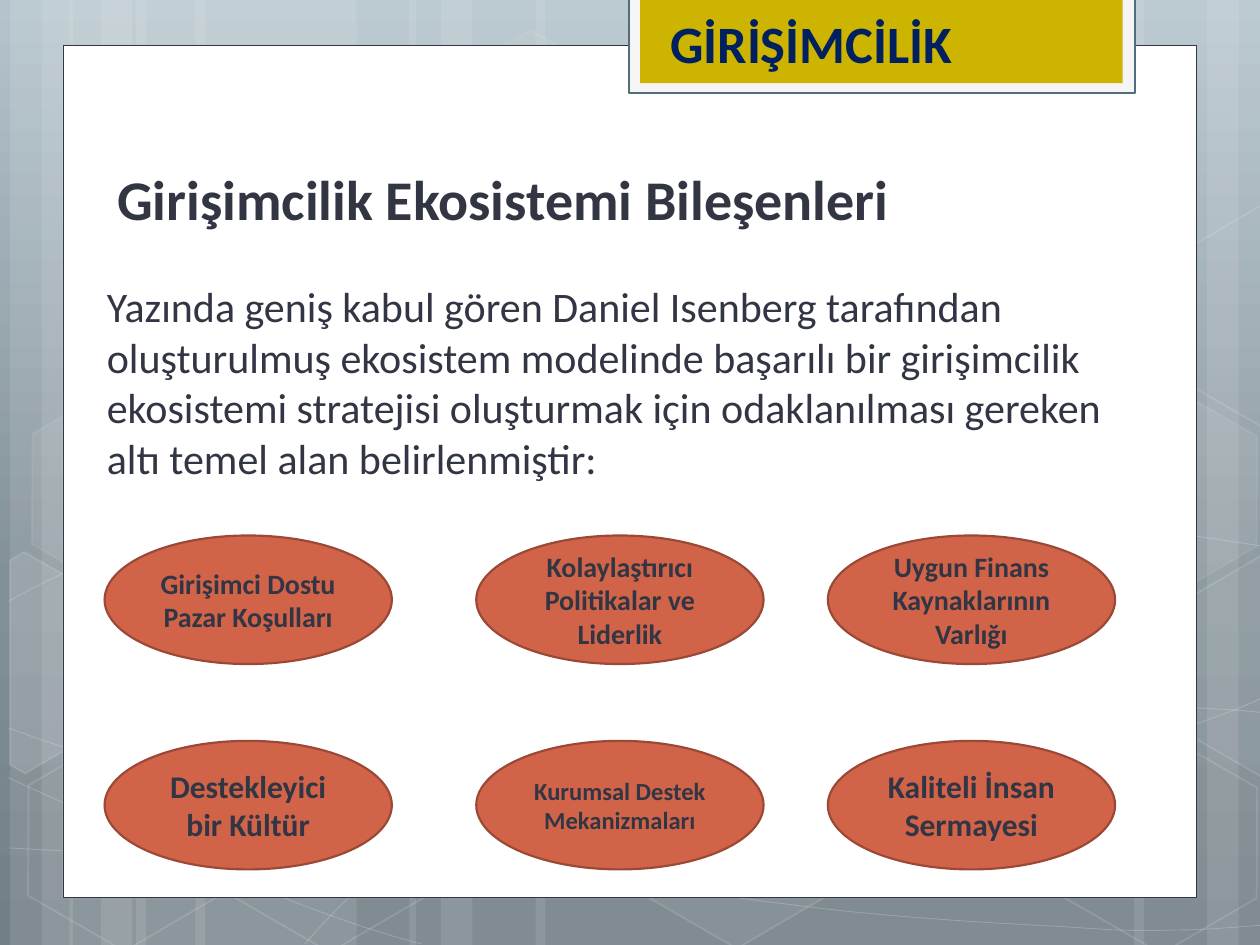
"""Build the slide on the components of the entrepreneurship ecosystem."""
import copy

import pptx
import pptx.dml.color
import pptx.enum.shapes
import pptx.enum.text
import pptx.oxml.ns
import pptx.util

RGB = pptx.dml.color.RGBColor
SHAPE = pptx.enum.shapes.MSO_SHAPE
ALIGN = pptx.enum.text.PP_ALIGN
ANCHOR = pptx.enum.text.MSO_ANCHOR
AUTO_SIZE = pptx.enum.text.MSO_AUTO_SIZE
qn = pptx.oxml.ns.qn

EMU_PER_PX = 9144
FONT = "Calibri"
WHITE = RGB(0xFF, 0xFF, 0xFF)
INK = RGB(0x32, 0x35, 0x43)
TITLE_INK = RGB(0x32, 0x36, 0x43)
NAVY = RGB(0x00, 0x20, 0x60)
TAB_EDGE = RGB(0x54, 0x6D, 0x7A)
TAB_BORDER = RGB(0xF5, 0xF5, 0xF5)
GOLD = RGB(0xCC, 0xB4, 0x00)
RUST = RGB(0xD1, 0x63, 0x49)
RUST_EDGE = RGB(0x9B, 0x49, 0x36)
SKY = [(0, RGB(0xB5, 0xC4, 0xCC)), (0.62, RGB(0x82, 0x90, 0x97)),
       (1, RGB(0x72, 0x7F, 0x86))]

STRIPES = [(108, 175, 0), (8, 50, 0), (33, 83, 0), (155, 175, 0), (55, 50, 0),
           (80, 83, 0), (733, 175, 180), (958, 50, 180), (900, 83, 180),
           (425, 308, 0), (325, 50, 0), (350, 83, 0)]
CURVES = [
    [(7, 673), (61, 676), (115, 679), (190, 678), (265, 677), (358, 675), (458, 665),
     (558, 655), (700, 636), (792, 617), (883, 598), (977, 568), (1007, 551)],
    [(7, 477), (36, 461), (65, 446), (121, 431), (178, 416), (259, 394), (347, 387),
     (436, 380), (544, 379), (654, 387), (764, 395), (947, 426), (1007, 434)],
    [(6, 617), (127, 672), (247, 727), (334, 749)],
    [(7, 578), (38, 589), (70, 600), (128, 616), (186, 631), (273, 656), (357, 673),
     (440, 690), (545, 708), (628, 718), (711, 729), (800, 733), (853, 736),
     (905, 740), (919, 738), (945, 738), (971, 737), (989, 735), (1007, 734)],
    [(242, 749), (260, 729), (278, 709), (302, 691), (326, 673), (360, 653), (388, 639),
     (416, 625), (433, 619), (470, 609), (506, 599), (573, 585), (608, 578),
     (644, 571), (649, 571), (680, 569), (711, 566), (760, 563), (794, 562),
     (829, 561), (886, 562), (886, 562), (908, 562), (931, 562), (953, 562),
     (971, 563), (988, 564), (997, 565), (1006, 566), (1003, 565), (1006, 566)],
]
HEXAGONS = [(334, 36, 4, 8), (497, 589, 6, 12), (11, 591, 0, 12), (14, 312, 7, 8),
            (174, 592, 0, 12), (753, 453, 10, 12), (834, 593, 0, 12), (834, 314, 7, 8)]
CUT_HEXAGONS = [
    ([(8, 445), (19, 438), (96, 482), (95, 570), (20, 614), (8, 607)], 10),
    ([(926, 485), (1001, 441), (1009, 446), (1009, 613), (1002, 617), (926, 573)], 4),
    ([(926, 207), (1001, 163), (1010, 168), (1009, 335), (1002, 339), (926, 295)], 0),
]
COLUMNS = [83, 378, 657]
ROWS = [425, 588]
COMPONENTS = [
    ("Girişimci Dostu Pazar Koşulları", 16),
    ("Kolaylaştırıcı Politikalar ve Liderlik", 16),
    ("Uygun Finans Kaynaklarının Varlığı", 16),
    ("Destekleyici bir Kültür", 18),
    ("Kurumsal Destek Mekanizmaları", 14),
    ("Kaliteli İnsan Sermayesi", 18),
]
INTRODUCTION = (
    "Yazında geniş kabul gören Daniel Isenberg tarafından oluşturulmuş ekosistem "
    "modelinde başarılı bir girişimcilik ekosistemi stratejisi oluşturmak için "
    "odaklanılması gereken altı temel alan belirlenmiştir:")


def px(*lengths):
    return [length * EMU_PER_PX for length in lengths]


def set_alpha(shape, color_location, percent):
    color = shape.element.spPr.find("/".join(qn(tag) for tag in color_location.split("/")))
    color.append(color.makeelement(qn("a:alpha"), {"val": str(percent * 1000)}))


def paint(shape, fill=None, line=None, width=1, fill_alpha=100, line_alpha=100):
    shape.shadow.inherit = False
    if fill is None:
        shape.fill.background()
    else:
        shape.fill.solid()
        shape.fill.fore_color.rgb = fill
        if fill_alpha < 100:
            set_alpha(shape, "a:solidFill/a:srgbClr", fill_alpha)
    if line is None:
        shape.line.fill.background()
    else:
        shape.line.color.rgb = line
        shape.line.width = pptx.util.Pt(width)
        if line_alpha < 100:
            set_alpha(shape, "a:ln/a:solidFill/a:srgbClr", line_alpha)


def add_preset(slide, kind, box, **colors):
    shape = slide.shapes.add_shape(kind, *px(*box))
    paint(shape, **colors)
    return shape


def add_outline(slide, points, close, **colors):
    builder = slide.shapes.build_freeform(*points[0], scale=EMU_PER_PX)
    builder.add_line_segments(points[1:], close=close)
    shape = builder.convert_to_shape()
    paint(shape, **colors)
    return shape


def add_curve(slide, controls, **colors):
    shape = add_outline(slide, controls, False, **colors)
    outline = shape.element.spPr.find(".//" + qn("a:path"))
    segments = outline.findall(qn("a:lnTo"))
    for first in range(0, len(segments), 3):
        curve = outline.makeelement(qn("a:cubicBezTo"))
        outline.append(curve)
        for segment in segments[first:first + 3]:
            curve.append(segment[0])
            outline.remove(segment)


def write_text(shape, text, size, color=INK, bold=True, align=ALIGN.LEFT,
               anchor=ANCHOR.TOP, auto_size=AUTO_SIZE.NONE):
    frame = shape.text_frame
    frame.word_wrap = True
    frame.auto_size = auto_size
    frame.vertical_anchor = anchor
    paragraph = frame.paragraphs[0]
    paragraph.alignment = align
    run = paragraph.add_run()
    run.text = text
    run.font.name = FONT
    run.font.size = pptx.util.Pt(size)
    run.font.bold = bold
    run.font.color.rgb = color


def add_text(slide, box, text, size, **text_format):
    write_text(slide.shapes.add_textbox(*px(*box)), text, size,
               auto_size=AUTO_SIZE.SHAPE_TO_FIT_TEXT, **text_format)


def fill_background(slide):
    fill = slide.background.fill
    fill.gradient()
    fill.gradient_angle = 270
    stop_list = slide.element.find(".//" + qn("a:gsLst"))
    stop_list.append(copy.deepcopy(stop_list[-1]))
    for stop, (position, color) in zip(fill.gradient_stops, SKY):
        stop.position = position
        stop.color.rgb = color


def add_backdrop(slide):
    for left, width, rotation in STRIPES:
        stripe = add_preset(slide, SHAPE.RECTANGLE, (left, 0, width, 750),
                            fill=WHITE, fill_alpha=10)
        stripe.rotation = rotation
    for controls in CURVES:
        add_curve(slide, controls, line=WHITE, width=0.5, line_alpha=20)
    for left, top, fill_alpha, line_alpha in HEXAGONS:
        hexagon = add_preset(slide, SHAPE.HEXAGON, (left, top, 175, 152),
                             fill=WHITE if fill_alpha else None, fill_alpha=fill_alpha,
                             line=WHITE, line_alpha=line_alpha)
        hexagon.adjustments[0] = 0.285
        hexagon.rotation = 30
    for points, fill_alpha in CUT_HEXAGONS:
        add_outline(slide, points, True, fill=WHITE if fill_alpha else None,
                    fill_alpha=fill_alpha, line=WHITE, line_alpha=12)


def place_title(slide, box, text):
    title = slide.shapes.title
    title.element.getparent().append(title.element)
    title.left, title.top, title.width, title.height = px(*box)
    write_text(title, text, 32, color=TITLE_INK, anchor=ANCHOR.BOTTOM)


def add_components(slide):
    for index, (text, size) in enumerate(COMPONENTS):
        row, column = divmod(index, len(COLUMNS))
        ellipse = add_preset(slide, SHAPE.OVAL, (COLUMNS[column], ROWS[row], 228, 102),
                             fill=RUST, line=RUST_EDGE, width=1.25)
        write_text(ellipse, text, size, align=ALIGN.CENTER, anchor=ANCHOR.MIDDLE)


def main():
    presentation = pptx.Presentation()
    presentation.slide_width, presentation.slide_height = px(1000, 750)
    slide = presentation.slides.add_slide(presentation.slide_layouts[5])
    fill_background(slide)
    add_backdrop(slide)
    add_preset(slide, SHAPE.RECTANGLE, (50, 36, 900, 676), fill=WHITE, line=INK, width=0.5)
    add_preset(slide, SHAPE.RECTANGLE, (499, -2, 402, 76),
               fill=TAB_BORDER, line=TAB_EDGE, width=1.25)
    add_preset(slide, SHAPE.RECTANGLE, (508, -2, 383, 68), fill=GOLD)
    place_title(slide, (83, 115, 768, 74), "Girişimcilik Ekosistemi Bileşenleri")
    add_text(slide, (75, 218, 827, 172), INTRODUCTION, 24, bold=False)
    add_components(slide)
    add_text(slide, (522, 4, 268, 111), "GİRİŞİMCİLİK", 30, color=NAVY)
    presentation.save("out.pptx")


if __name__ == "__main__":
    main()
